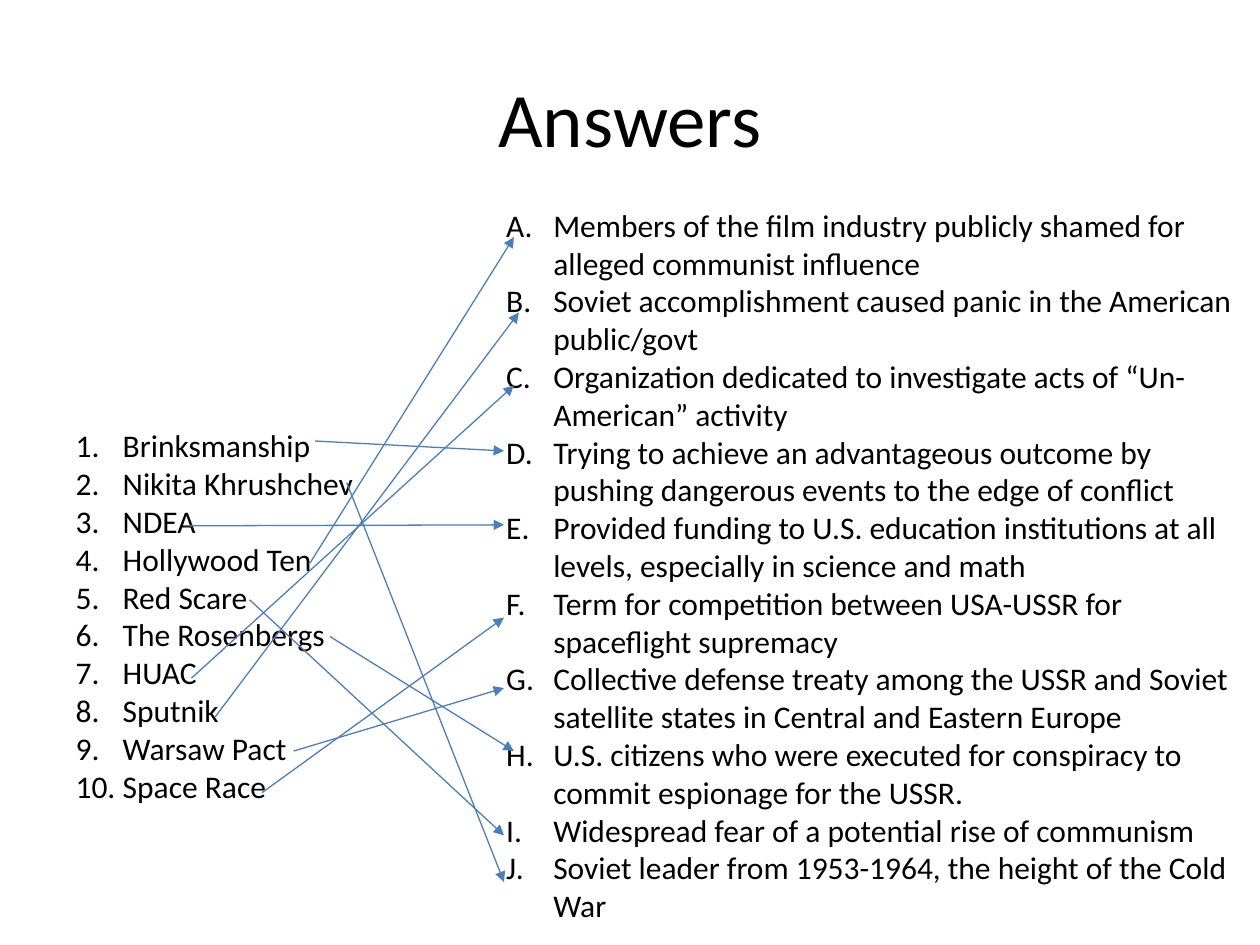
from lxml import etree
from pptx import Presentation
from pptx.dml.color import RGBColor
from pptx.enum.shapes import MSO_CONNECTOR
from pptx.enum.text import MSO_ANCHOR, MSO_AUTO_SIZE, PP_ALIGN
from pptx.oxml.ns import qn
from pptx.util import Cm, Pt

BLACK = RGBColor(0x00, 0x00, 0x00)
BLUE = RGBColor(0x4B, 0x7E, 0xBC)
STRAIGHT = MSO_CONNECTOR.STRAIGHT
TOP, MIDDLE = MSO_ANCHOR.TOP, MSO_ANCHOR.MIDDLE
FIXED = MSO_AUTO_SIZE.NONE
LEFT, CENTER = PP_ALIGN.LEFT, PP_ALIGN.CENTER

# Terms, each with the start and end of its arrow in cm
TERMS = [
    ("Brinksmanship", (6.35, 8.89), (10.16, 9.09)),
    ("Nikita Khrushchev", (6.99, 9.73), (10.16, 17.78)),
    ("NDEA", (3.71, 10.6), (10.16, 10.58)),
    ("Hollywood Ten", (6.25, 11.35), (10.36, 4.78)),
    ("Red Scare", (5.03, 12.09), (10.16, 16.84)),
    ("The Rosenbergs", (6.65, 12.83), (10.36, 15.14)),
    ("HUAC", (3.86, 13.67), (10.36, 7.77)),
    ("Sputnik", (4.34, 14.45), (10.46, 6.3)),
    ("Warsaw Pact", (5.92, 15.14), (10.16, 13.87)),
    ("Space Race", (5.28, 15.98), (10.16, 12.45)),
]
CLUES = [
    "Members of the film industry publicly shamed for alleged communist influence",
    "Soviet accomplishment caused panic in the American public/govt",
    "Organization dedicated to investigate acts of “Un-American” activity",
    "Trying to achieve an advantageous outcome by pushing dangerous events "
    "to the edge of conflict",
    "Provided funding to U.S. education institutions at all levels, "
    "especially in science and math",
    "Term for competition between USA-USSR for spaceflight supremacy",
    "Collective defense treaty among the USSR and Soviet satellite states "
    "in Central and Eastern Europe",
    "U.S. citizens who were executed for conspiracy to commit espionage for the USSR.",
    "Widespread fear of a potential rise of communism",
    "Soviet leader from 1953-1964, the height of the Cold War",
]
TITLE_FONT = {"name": "Calibri", "size": Pt(44)}
LIST_FONT = {"name": "Calibri", "size": Pt(18)}
FRAME = {"word_wrap": True, "auto_size": FIXED}


def style(item, values):
    for key, value in values.items():
        setattr(item, key, value)


def fill(holder, box, lines, anchor, align, font, number=None):
    """Place a placeholder and write its lines, numbered if asked."""
    style(holder, dict(zip(("left", "top", "width", "height"), map(Cm, box))))
    frame = holder.text_frame
    frame.text = "\n".join(lines)
    style(frame, {**FRAME, "vertical_anchor": anchor})
    for par in frame.paragraphs:
        if number:
            props = par._p.get_or_add_pPr()
            props.set("marL", str(Cm(0.95)))
            props.set("indent", str(-Cm(0.95)))
            etree.SubElement(props, qn("a:buFont"), typeface="+mj-lt")
            etree.SubElement(props, qn("a:buAutoNum"), type=number)
        style(par, {"alignment": align, "space_before": Pt(0)})
        style(par.font, font)
        par.font.color.rgb = BLACK


prs = Presentation()
prs.slide_width, prs.slide_height = Cm(25.4), Cm(19.05)
slide = prs.slides.add_slide(prs.slide_layouts[3])
title, left, right = list(slide.placeholders)[:3]

# Title and the two lists
fill(title, (1.27, 0.76, 22.86, 3.18), ["Answers"], MIDDLE, CENTER, TITLE_FONT)
fill(left, (1.27, 8.47, 11.64, 7.95), [term[0] for term in TERMS],
     TOP, LEFT, LIST_FONT, "arabicPeriod")
fill(right, (9.95, 4.02, 15.45, 16.26), CLUES,
     TOP, LEFT, LIST_FONT, "alphaUcPeriod")

# Arrows from each term to its clue
for term, start, end in TERMS:
    arrow = slide.shapes.add_connector(STRAIGHT, *map(Cm, start + end))
    arrow.line.width = Pt(0.75)
    arrow.line.color.rgb = BLUE
    etree.SubElement(arrow.line._get_or_add_ln(), qn("a:tailEnd"), type="triangle")
    etree.SubElement(arrow._element.spPr, qn("a:effectLst"))

prs.save("out.pptx")
